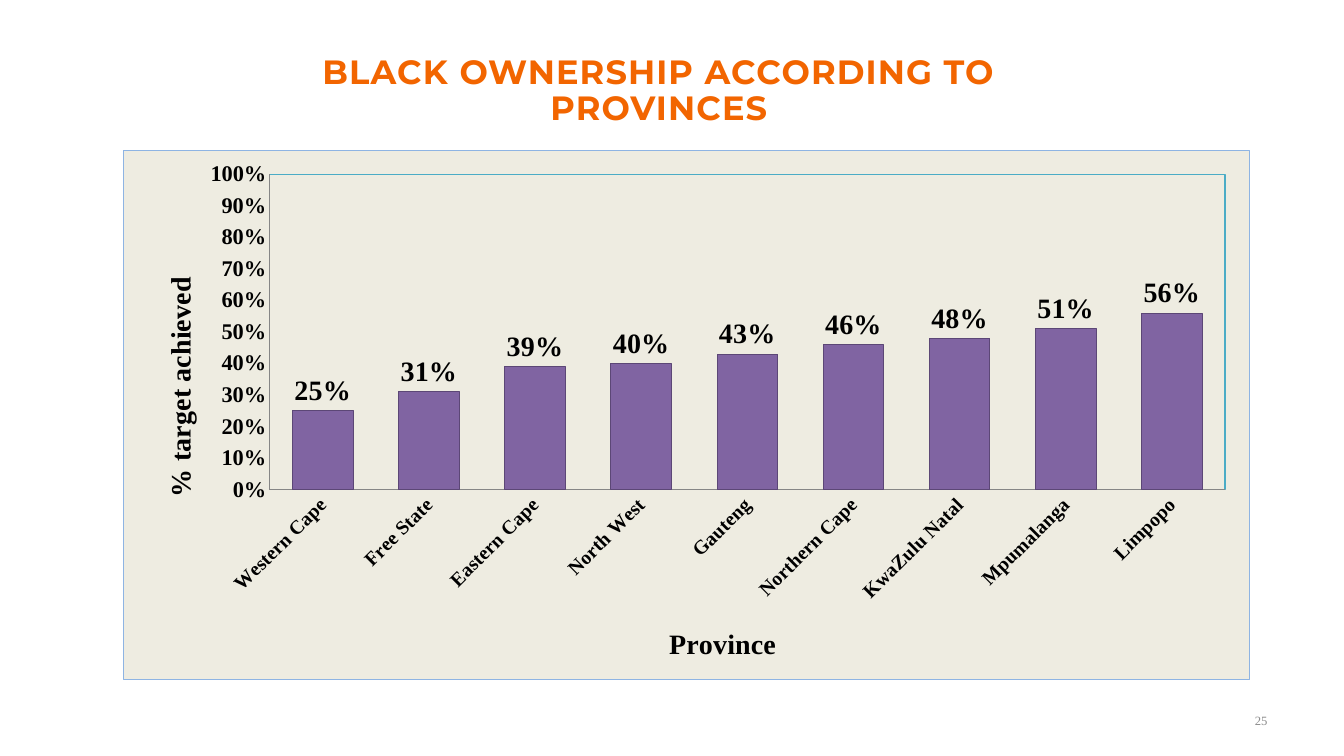
from lxml import etree
from pptx import Presentation
from pptx.chart.data import CategoryChartData
from pptx.dml.color import RGBColor
from pptx.enum.chart import XL_CHART_TYPE, XL_LABEL_POSITION, XL_TICK_MARK
from pptx.enum.text import MSO_ANCHOR, PP_ALIGN
from pptx.oxml import parse_xml
from pptx.oxml.ns import nsdecls, qn
from pptx.util import Inches, Pt

COLUMNS = XL_CHART_TYPE.COLUMN_CLUSTERED
OUTSIDE_END = XL_LABEL_POSITION.OUTSIDE_END
NO_TICK = XL_TICK_MARK.NONE
CENTER, RIGHT = PP_ALIGN.CENTER, PP_ALIGN.RIGHT
TOP, MIDDLE = MSO_ANCHOR.TOP, MSO_ANCHOR.MIDDLE

ORANGE = RGBColor(0xF2, 0x65, 0x00)
GRAY = RGBColor(0x8C, 0x8C, 0x8C)
BLACK = RGBColor(0x00, 0x00, 0x00)
PURPLE = RGBColor(0x80, 0x64, 0xA2)
DARK_PURPLE = RGBColor(0x5C, 0x47, 0x76)
BEIGE = RGBColor(0xEE, 0xEC, 0xE1)
LIGHT_BLUE = RGBColor(0x8E, 0xB4, 0xE3)
TEAL = RGBColor(0x4B, 0xAC, 0xC6)
AXIS_GRAY = RGBColor(0x86, 0x86, 0x86)

OWNERSHIP = {
    "Western Cape": 0.25,
    "Free State": 0.31,
    "Eastern Cape": 0.39,
    "North West": 0.40,
    "Gauteng": 0.43,
    "Northern Cape": 0.46,
    "KwaZulu Natal": 0.48,
    "Mpumalanga": 0.51,
    "Limpopo": 0.56,
}


def set_attributes(target, values):
    for name, value in values.items():
        setattr(target, name, value)


def area_format(fill, border, width):
    return parse_xml(
        f'<c:spPr {nsdecls("c", "a")}>'
        f'<a:solidFill><a:srgbClr val="{fill}"/></a:solidFill>'
        f'<a:ln w="{Pt(width)}"><a:solidFill><a:srgbClr val="{border}"/></a:solidFill></a:ln>'
        '</c:spPr>'
    )


def manual_layout(**values):
    layout = etree.Element(qn("c:layout"))
    manual = etree.SubElement(layout, qn("c:manualLayout"))
    for name, value in values.items():
        etree.SubElement(manual, qn(f"c:{name}")).set("val", str(value))
    return layout


def replace_layout(parent, layout, index):
    for current in parent.findall(qn("c:layout")):
        parent.remove(current)
    parent.insert(index, layout)


class SlideBuilder:
    chart_font = "Times New Roman"
    title_font = "Montserrat"

    def __init__(self, slide):
        self.slide = slide

    def text(self, text, box, font, align, anchor=TOP, line_spacing=1.0, tracking=0):
        shape = self.slide.shapes.add_textbox(*map(Inches, box))
        frame = shape.text_frame
        set_attributes(frame, {"word_wrap": True, "vertical_anchor": anchor})
        paragraph = frame.paragraphs[0]
        set_attributes(paragraph, {"alignment": align, "line_spacing": line_spacing})
        run = paragraph.add_run()
        run.text = text
        color = font.pop("color")
        set_attributes(run.font, font)
        run.font.color.rgb = color
        if tracking:
            run.font._element.set("spc", str(round(tracking * 100)))

    def axis(self, axis, title, size, rotation, title_rotation, x, y):
        set_attributes(axis, {
            "has_major_gridlines": False,
            "major_tick_mark": NO_TICK,
            "minor_tick_mark": NO_TICK,
            "has_title": True,
        })
        axis.format.line.color.rgb = AXIS_GRAY
        axis.format.line.width = Pt(0.75)
        self.chart_text(axis.tick_labels.font, size)
        labels_body = axis.tick_labels.font._element.getparent().getparent().getparent().find(qn("a:bodyPr"))
        labels_body.set("rot", str(rotation * 60000))
        labels_body.set("vert", "horz")
        frame = axis.axis_title.text_frame
        frame.text = title
        self.chart_text(frame.paragraphs[0].runs[0].font, 20)
        title_body = frame._element.find(qn("a:bodyPr"))
        title_body.set("rot", str(title_rotation * 60000))
        title_body.set("vert", "horz")
        replace_layout(axis.axis_title._element,
                       manual_layout(xMode="edge", yMode="edge", x=x, y=y), 1)

    def chart_text(self, font, size, bold=True):
        set_attributes(font, {"name": self.chart_font, "size": Pt(size), "bold": bold})
        font.color.rgb = BLACK

    def column_chart(self, values, box):
        data = CategoryChartData(number_format="0%")
        data.categories = list(values)
        data.add_series("Series 1", list(values.values()))
        chart = self.slide.shapes.add_chart(COLUMNS, *map(Inches, box), data).chart
        set_attributes(chart, {"has_legend": False, "has_title": False})
        self.chart_text(chart.font, 10, False)

        plot = chart.plots[0]
        set_attributes(plot, {"gap_width": 75, "vary_by_categories": False, "has_data_labels": True})
        set_attributes(plot.data_labels, {
            "show_value": True,
            "number_format": "0%",
            "number_format_is_linked": False,
            "position": OUTSIDE_END,
        })
        self.chart_text(plot.data_labels.font, 20)
        series_format = plot.series[0].format
        series_format.fill.solid()
        series_format.fill.fore_color.rgb = PURPLE
        series_format.line.color.rgb = DARK_PURPLE
        series_format.line.width = Pt(0.75)

        self.axis(chart.category_axis, "Province", 14, -45, 0, 0.48, 0.89)
        self.axis(chart.value_axis, "% target achieved", 16, 0, -90, 0.03, 0.23)
        set_attributes(chart.value_axis, {
            "minimum_scale": 0, "maximum_scale": 1, "major_unit": 0.1,
        })
        set_attributes(chart.value_axis.tick_labels, {
            "number_format": "0%", "number_format_is_linked": False,
        })

        chart_space = chart._chartSpace
        chart_space.find(qn("c:txPr")).addprevious(area_format(BEIGE, LIGHT_BLUE, 0.5))
        plot_area = chart_space.find(f'{qn("c:chart")}/{qn("c:plotArea")}')
        replace_layout(plot_area, manual_layout(
            layoutTarget="inner", xMode="edge", yMode="edge",
            x=0.13, y=0.045, w=0.848, h=0.597), 0)
        plot_area.append(area_format(BEIGE, TEAL, 0.75))


def main():
    presentation = Presentation()
    set_attributes(presentation, {"slide_width": Inches(13.33), "slide_height": Inches(7.5)})
    builder = SlideBuilder(presentation.slides.add_slide(presentation.slide_layouts[6]))
    builder.text(
        "BLACK OWNERSHIP ACCORDING TO PROVINCES", (2.07, 0.5, 8.93, 0.83),
        {"name": builder.title_font, "size": Pt(24), "bold": True, "color": ORANGE},
        CENTER, line_spacing=0.9, tracking=0.8)
    builder.text(
        "25", (9.56, 6.95, 3.11, 0.4),
        {"name": builder.chart_font, "size": Pt(9), "color": GRAY}, RIGHT, MIDDLE)
    builder.column_chart(OWNERSHIP, (1.22, 1.49, 11.18, 5.25))
    presentation.save("out.pptx")


if __name__ == "__main__":
    main()
